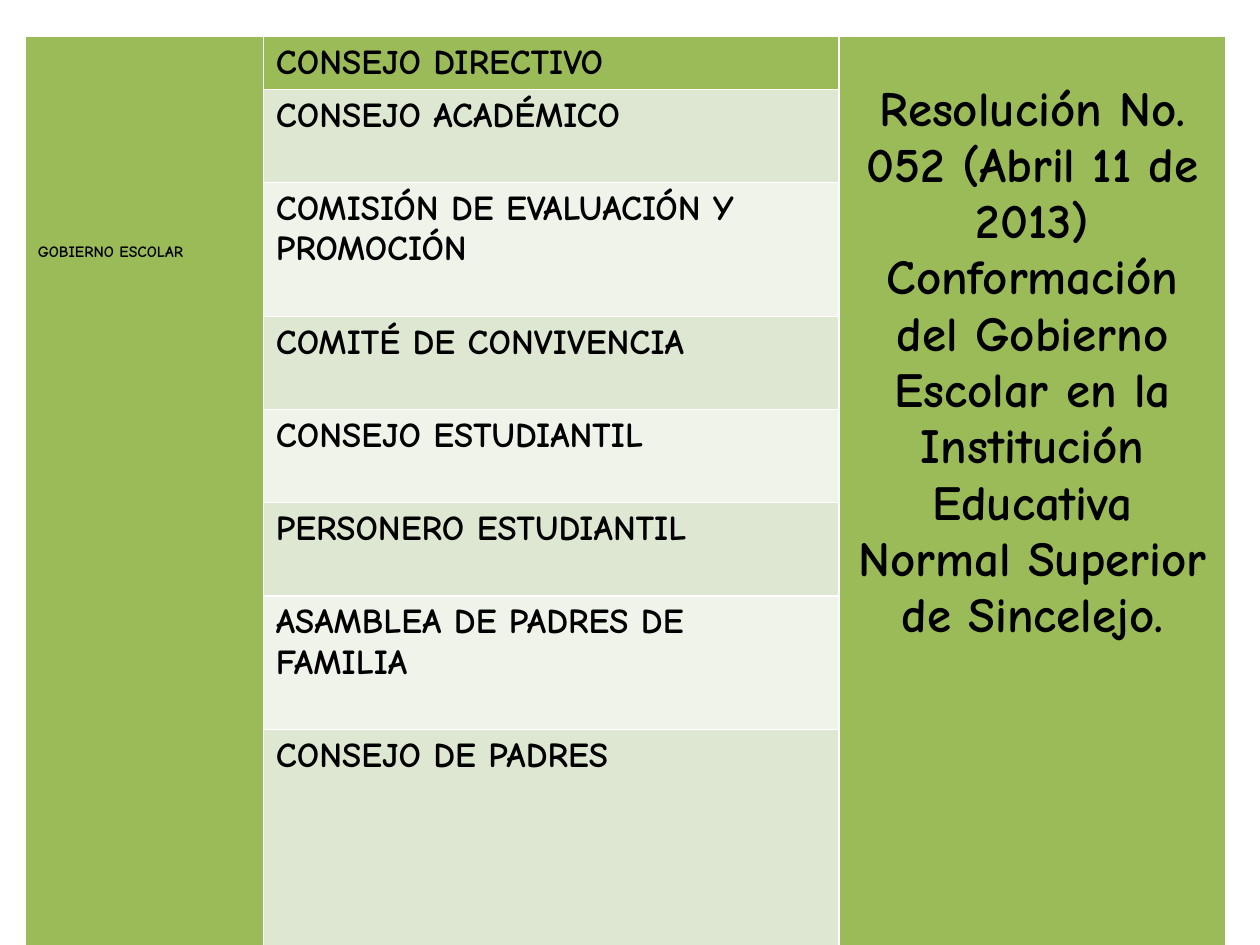
from pptx import Presentation
from pptx.dml.color import RGBColor
from pptx.enum.text import PP_ALIGN
from pptx.util import Inches, Pt

COLORS = {"head": "9BBB59", "dark": "DEE7D1", "light": "EFF3EA", "text": "000000"}
FONT = "Comic Neue"

# Each council with its row height
ROWS = [
    ("CONSEJO DIRECTIVO", 0.41),
    ("CONSEJO ACADÉMICO", 0.74),
    ("COMISIÓN DE EVALUACIÓN Y PROMOCIÓN", 1.06),
    ("COMITÉ DE CONVIVENCIA", 0.74),
    ("CONSEJO ESTUDIANTIL", 0.74),
    ("PERSONERO ESTUDIANTIL", 0.74),
    ("ASAMBLEA DE PADRES DE FAMILIA", 1.06),
    ("CONSEJO DE PADRES", 1.72),
]
COLS = [1.89, 4.57, 3.07]
ORDER = (
    "Resolución No. 052 (Abril 11 de 2013) Conformación del Gobierno Escolar "
    "en la Institución Educativa Normal Superior de Sincelejo."
)


def fill_cell(cell, text, size, color):
    cell.fill.solid()
    cell.fill.fore_color.rgb = RGBColor.from_string(COLORS[color])
    cell.text = text
    para = cell.text_frame.paragraphs[0]
    para.font.name = FONT
    para.font.size = Pt(size)
    para.font.bold = True
    para.font.color.rgb = RGBColor.from_string(COLORS["text"])
    return para


deck = Presentation()
deck.slide_width, deck.slide_height = Inches(10), Inches(7.5)
slide = deck.slides.add_slide(deck.slide_layouts[6])

# Table grid; its default style draws the white rules
high = sum(height for _, height in ROWS)
table = slide.shapes.add_table(
    len(ROWS), len(COLS), Inches(0.2), Inches(0.29), Inches(sum(COLS)), Inches(high)
).table
for col, width in zip(table.columns, COLS):
    col.width = Inches(width)

# Middle column: councils in banded rows
for i, (name, height) in enumerate(ROWS):
    table.rows[i].height = Inches(height)
    band = "head" if i == 0 else "dark" if i % 2 else "light"
    fill_cell(table.cell(i, 1), name, 20, band)

# Side columns: one tall cell each, text lowered by the top margin
for col, text, size, top, align in [
    (0, "GOBIERNO ESCOLAR", 9, 1.64, PP_ALIGN.LEFT),
    (2, ORDER, 28, 0.36, PP_ALIGN.CENTER),
]:
    cell = table.cell(0, col)
    cell.merge(table.cell(len(ROWS) - 1, col))
    cell.margin_top = Inches(top)
    fill_cell(cell, text, size, "head").alignment = align

deck.save("out.pptx")
